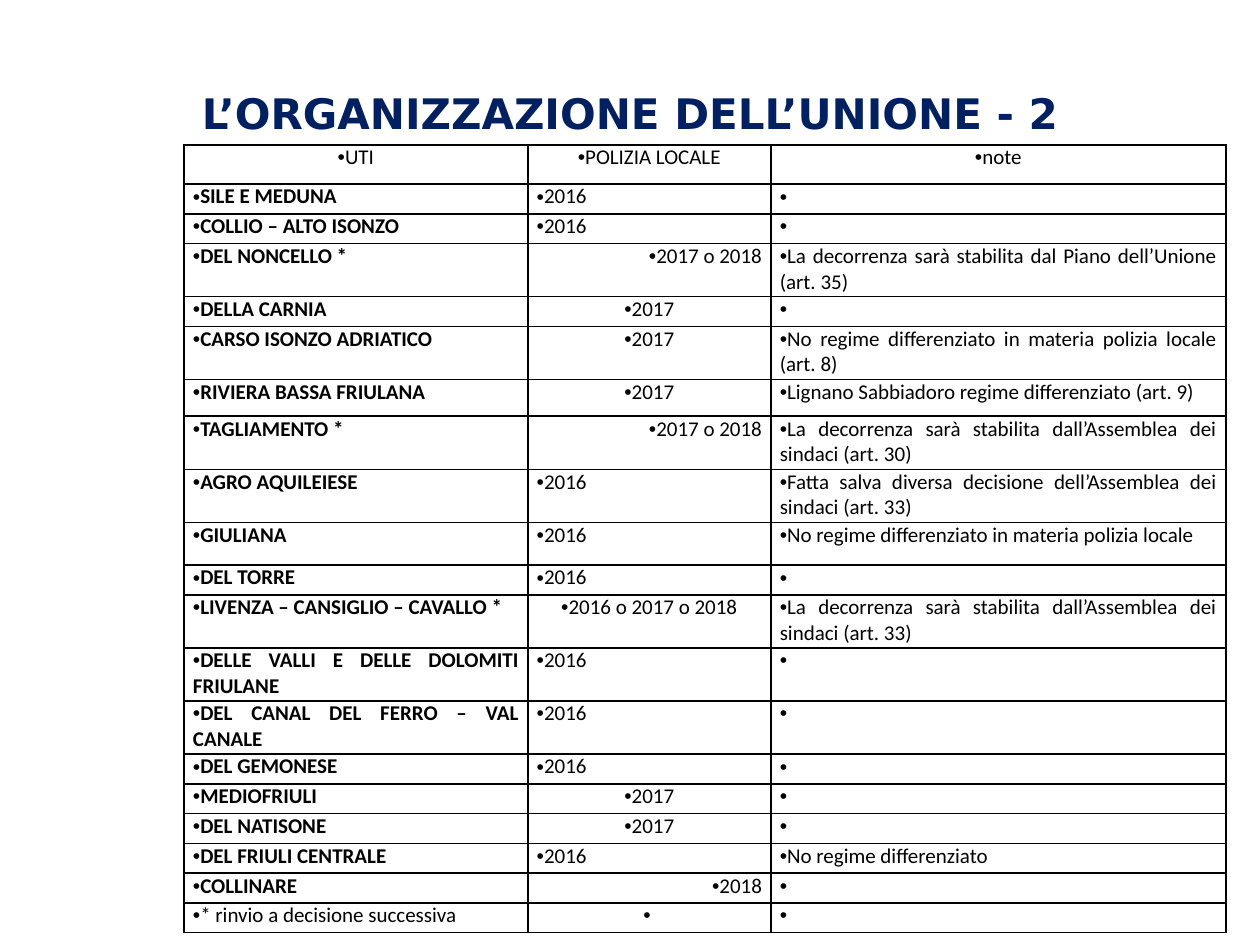
import pptx
import pptx.dml.color
import pptx.enum.text
import pptx.oxml
import pptx.oxml.ns
import pptx.util
from lxml import etree

Cm = pptx.util.Cm
Pt = pptx.util.Pt
ALIGN = pptx.enum.text.PP_ALIGN
ANCHOR = pptx.enum.text.MSO_ANCHOR
COLORS = {"title": "002060", "text": "000000", "border": "000000"}


def write_text(frame, text, font="Calibri", size=12, color="text", bold=False,
               align=ALIGN.LEFT, after=0, bullet=False):
    paragraph = frame.paragraphs[0]
    run = paragraph.add_run()
    run.text = text
    paragraph.alignment = align
    paragraph.space_before = Pt(0)
    paragraph.space_after = Pt(after)
    if bullet:
        properties = paragraph._p.get_or_add_pPr()
        properties.set("marL", "0")
        properties.set("indent", "0")
        for tag, name, value in (("a:buFont", "typeface", "Arial"), ("a:buChar", "char", "•")):
            etree.SubElement(properties, pptx.oxml.ns.qn(tag)).set(name, value)
    run.font.name = font
    run.font.size = Pt(size)
    run.font.bold = bold
    run.font.color.rgb = pptx.dml.color.RGBColor.from_string(COLORS[color])


def set_borders(cell, width=1):
    properties = cell._tc.get_or_add_tcPr()
    for position, side in enumerate(("lnL", "lnR", "lnT", "lnB")):
        properties.insert(position, pptx.oxml.parse_xml(
            f'<a:{side} {pptx.oxml.ns.nsdecls("a")} w="{Pt(width)}"><a:solidFill>'
            f'<a:srgbClr val="{COLORS["border"]}"/></a:solidFill></a:{side}>'))


presentation = pptx.Presentation()
presentation.slide_width = Cm(25.4)
presentation.slide_height = Cm(19.05)
slide = presentation.slides.add_slide(presentation.slide_layouts[5])

# Title
title = slide.shapes.title
title.left, title.top, title.width, title.height = Cm(1.27), Cm(0.76), Cm(22.86), Cm(3.18)
title.text_frame.word_wrap = True
title.text_frame.auto_size = pptx.enum.text.MSO_AUTO_SIZE.NONE
title.text_frame.vertical_anchor = ANCHOR.MIDDLE
title.text_frame.margin_bottom = Cm(0.27)
write_text(title.text_frame, "L’ORGANIZZAZIONE DELL’UNIONE - 2", font="DejaVu Sans",
           size=24, color="title", bold=True, align=ALIGN.CENTER)

# Table content: union, start of local police service, note, row height
SINGLE, DOUBLE = 0.6, 1.07
rows = [
    ("UTI", "POLIZIA LOCALE", "note", 0.79),
    ("SILE E MEDUNA", "2016", "", SINGLE),
    ("COLLIO – ALTO ISONZO", "2016", "", SINGLE),
    ("DEL NONCELLO *", "2017 o 2018",
     "La decorrenza sarà stabilita dal Piano dell’Unione (art. 35)", DOUBLE),
    ("DELLA CARNIA", "2017", "", SINGLE),
    ("CARSO ISONZO ADRIATICO", "2017",
     "No regime differenziato in materia polizia locale (art. 8)", DOUBLE),
    ("RIVIERA BASSA FRIULANA", "2017",
     "Lignano Sabbiadoro regime differenziato (art. 9)", 0.74),
    ("TAGLIAMENTO *", "2017 o 2018",
     "La decorrenza sarà stabilita dall’Assemblea dei sindaci (art. 30)", DOUBLE),
    ("AGRO AQUILEIESE", "2016",
     "Fatta salva diversa decisione dell’Assemblea dei sindaci (art. 33)", DOUBLE),
    ("GIULIANA", "2016", "No regime differenziato in materia polizia locale", 0.86),
    ("DEL TORRE", "2016", "", SINGLE),
    ("LIVENZA – CANSIGLIO – CAVALLO *", "2016 o 2017 o 2018",
     "La decorrenza sarà stabilita dall’Assemblea dei sindaci (art. 33)", DOUBLE),
    ("DELLE VALLI E DELLE DOLOMITI FRIULANE", "2016", "", DOUBLE),
    ("DEL CANAL DEL FERRO – VAL CANALE", "2016", "", DOUBLE),
    ("DEL GEMONESE", "2016", "", SINGLE),
    ("MEDIOFRIULI", "2017", "", SINGLE),
    ("DEL NATISONE", "2017", "", SINGLE),
    ("DEL FRIULI CENTRALE", "2016", "No regime differenziato", SINGLE),
    ("COLLINARE", "2018", "", SINGLE),
    ("* rinvio a decisione successiva", "", "", SINGLE),
]
column_widths = [6.93, 4.9, 9.17]
# The year sets the alignment of the middle column
year_alignment = {"2016": ALIGN.LEFT, "2017 o 2018": ALIGN.RIGHT, "2018": ALIGN.RIGHT}

# Table
table = slide.shapes.add_table(len(rows), len(column_widths), Cm(3.71), Cm(2.92),
                               Cm(sum(column_widths)), Cm(sum(row[-1] for row in rows))).table
table.first_row = False
table.horz_banding = False
for column, width in zip(table.columns, column_widths):
    column.width = Cm(width)

for row_index, (*texts, height) in enumerate(rows):
    table.rows[row_index].height = Cm(height)
    header = row_index == 0
    for column_index, text in enumerate(texts):
        cell = table.cell(row_index, column_index)
        cell.margin_left = cell.margin_right = Cm(0.18)
        cell.margin_top = cell.margin_bottom = 0
        cell.fill.background()
        set_borders(cell)
        if header:
            align = ALIGN.CENTER
        elif column_index == 1:
            align = year_alignment.get(text, ALIGN.CENTER)
        else:
            align = ALIGN.JUSTIFY
        union_name = column_index == 0 and not header and not text.startswith("*")
        # A space keeps the bullet visible in a cell without text
        write_text(cell.text_frame, text or " ", bold=union_name, align=align,
                   after=6 if header else 0, bullet=True)

presentation.save("out.pptx")
